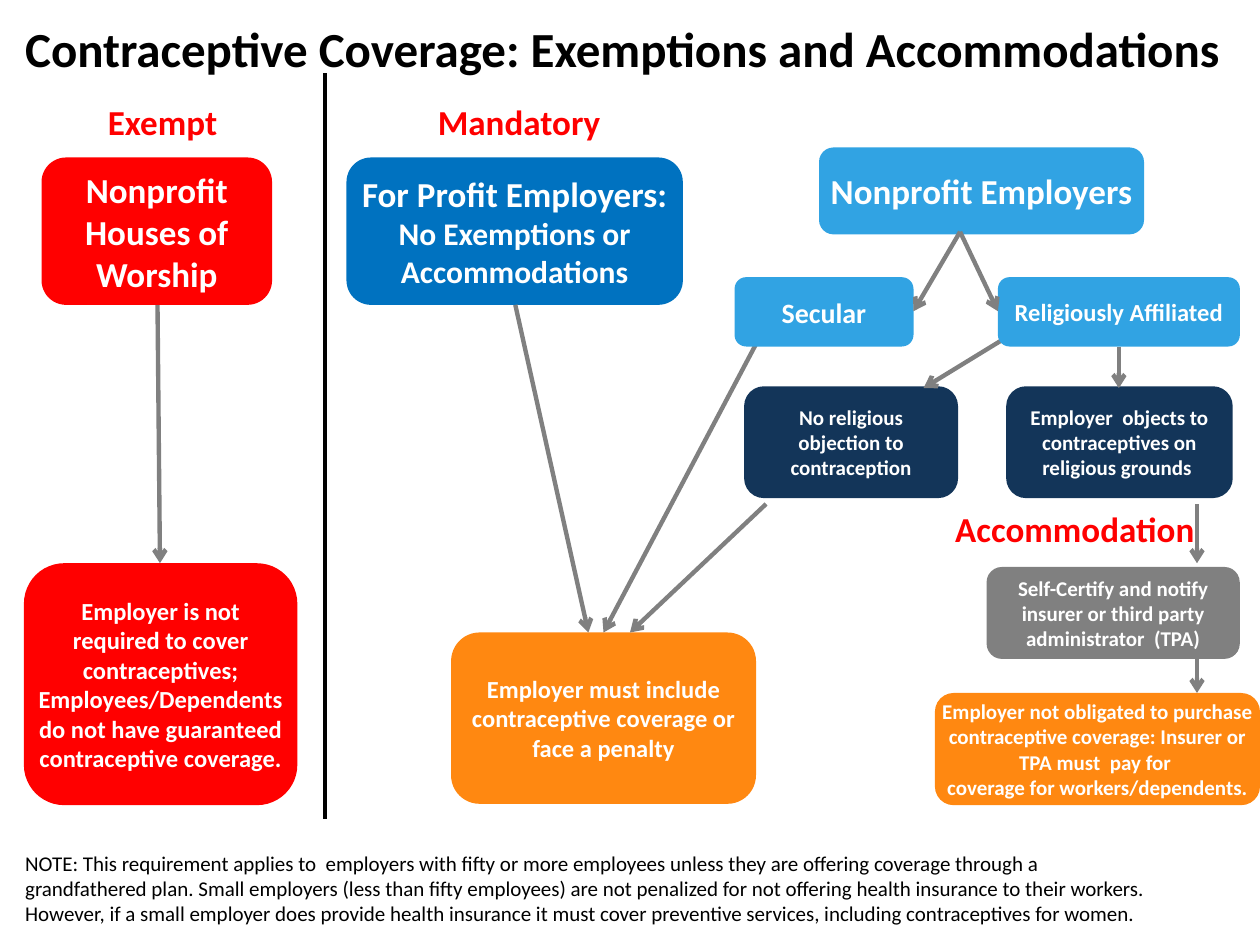
from lxml import etree
from pptx import Presentation
from pptx.dml.color import RGBColor
from pptx.enum.shapes import MSO_CONNECTOR, MSO_SHAPE
from pptx.enum.text import MSO_ANCHOR, MSO_AUTO_SIZE, PP_ALIGN
from pptx.oxml.ns import qn
from pptx.util import Inches, Pt

COLORS = {
    "black": "000000", "white": "FFFFFF", "red": "FF0000", "orange": "FF8811",
    "blue": "0072C0", "sky": "31A3E3", "navy": "133559", "gray": "808080",
}


def color(name):
    return RGBColor.from_string(COLORS[name])


class FlowSlide:
    font = "Calibri"

    def __init__(self, prs):
        self.s = prs.slides.add_slide(prs.slide_layouts[1])

    def set_text(self, tf, lines, ink, bold=True, align=PP_ALIGN.CENTER):
        """Fill a text frame with (text, size) paragraphs."""
        tf.text = "\n".join(text for text, _ in lines)
        for p, (_, size) in zip(tf.paragraphs, lines):
            p.alignment = align
            for r in p.runs:
                r.font.name, r.font.size, r.font.bold = self.font, Pt(size), bold
                r.font.color.rgb = color(ink)

    def placeholder(self, idx, at, text, size, bold, anchor):
        sp = self.s.placeholders[idx]
        sp.left, sp.top, sp.width, sp.height = map(Inches, at)
        tf = sp.text_frame
        self.set_text(tf, [(text, size)], "black", bold, PP_ALIGN.LEFT)
        tf.word_wrap = True
        tf.auto_size = MSO_AUTO_SIZE.NONE
        tf.vertical_anchor = anchor
        p = tf.paragraphs[0]
        p.space_before = Pt(0)
        pPr = p._p.get_or_add_pPr()
        pPr.set("marL", "0")
        pPr.set("indent", "0")
        etree.SubElement(pPr, qn("a:buNone"))

    def box(self, at, fill, lines, inset=0.0):
        sp = self.s.shapes.add_shape(MSO_SHAPE.ROUNDED_RECTANGLE, *map(Inches, at))
        sp.shadow.inherit = False
        sp.fill.solid()
        sp.fill.fore_color.rgb = color(fill)
        if fill == "navy":
            sp.line.color.rgb = color(fill)
            sp.line.width = Pt(2)
        else:
            sp.line.fill.background()
        tf = sp.text_frame
        tf.word_wrap = True
        tf.vertical_anchor = MSO_ANCHOR.MIDDLE
        tf.margin_left = tf.margin_right = Inches(inset)
        tf.margin_top = tf.margin_bottom = Inches(inset / 2)
        self.set_text(tf, lines, "white")

    def label(self, left, top, width, text):
        sp = self.s.shapes.add_textbox(*map(Inches, (left, top, width, 0.44)))
        sp.text_frame.word_wrap = False
        self.set_text(sp.text_frame, [(text, 20)], "red")

    def line(self, start, end, ink="gray", width=2.5, arrow=True):
        c = self.s.shapes.add_connector(
            MSO_CONNECTOR.STRAIGHT, *map(Inches, (*start, *end)))
        c.line.color.rgb = color(ink)
        c.line.width = Pt(width)
        spPr = c._element.spPr
        if arrow:
            etree.SubElement(spPr.find(qn("a:ln")), qn("a:tailEnd"), type="arrow")
        etree.SubElement(spPr, qn("a:effectLst"))


def main():
    prs = Presentation()
    prs.slide_width, prs.slide_height = Inches(10), Inches(7.5)
    flow = FlowSlide(prs)

    flow.placeholder(0, (0.1, 0.1, 9.8, 1),
                     "Contraceptive Coverage: Exemptions and Accommodations",
                     28, True, MSO_ANCHOR.TOP)
    flow.placeholder(
        1, (0.1, 6.8, 9.23, 0.6),
        "NOTE: This requirement applies to  employers with fifty or more employees "
        "unless they are offering coverage through a grandfathered plan. Small employers "
        "(less than fifty employees) are not penalized for not offering health insurance "
        "to their workers. However, if a small employer does provide health insurance it "
        "must cover preventive services, including contraceptives for women.",
        12, False, MSO_ANCHOR.BOTTOM)

    # Outcomes and the religious-objection branch
    flow.box((2.75, 1.25, 2.67, 1.17), "blue",
             [("For Profit Employers:", 20), ("No Exemptions or Accommodations", 18)])
    flow.box((3.58, 5.02, 2.42, 1.36), "orange",
             [("Employer must include contraceptive coverage or face a penalty", 14)], 0.1)
    flow.box((0.19, 4.47, 2.17, 1.92), "red",
             [("Employer is not required to cover contraceptives; Employees/Dependents "
               "do not have guaranteed contraceptive coverage.", 14)])
    flow.box((7.42, 5.5, 2.58, 0.89), "orange",
             [("Employer not obligated to purchase contraceptive coverage: Insurer or "
               "TPA must  pay for ", 12), ("coverage for workers/dependents.", 12)])
    flow.box((8, 3.08, 1.77, 0.86), "navy",
             [("Employer  objects to contraceptives on religious grounds ", 12)], 0.1)
    flow.box((7.83, 4.5, 2.01, 0.73), "gray",
             [("Self-Certify and notify insurer or third party administrator  (TPA)", 12)],
             0.1)
    flow.box((5.92, 3.08, 1.67, 0.86), "navy",
             [("No religious objection to contraception", 12)], 0.1)

    flow.line((2.58, 0.58), (2.58, 6.5), "black", 2.25, arrow=False)
    for start, end in [
        ((6.08, 2.58), (4.79, 5.02)),
        ((8, 2.67), (7.33, 3.08)),
        ((8.88, 2.75), (8.88, 3.08)),
        ((6.08, 4), (5, 5.02)),
        ((9.5, 4), (9.5, 4.47)),
        ((4.09, 2.42), (4.67, 5.02)),
        ((9.5, 5.23), (9.5, 5.5)),
        ((1.25, 2.42), (1.27, 4.47)),
    ]:
        flow.line(start, end)

    # Employer types cover the start of their outgoing arrows
    flow.box((0.33, 1.25, 1.83, 1.17), "red", [("Nonprofit Houses of Worship", 20)])
    flow.box((6.5, 1.17, 2.58, 0.69), "sky", [("Nonprofit Employers", 20)])
    flow.box((5.83, 2.2, 1.42, 0.55), "sky", [("Secular", 16)])
    flow.box((7.92, 2.2, 1.92, 0.55), "sky", [("Religiously Affiliated", 14)])
    for x in (7.25, 7.92):
        flow.line((7.62, 1.84), (x, 2.47))

    flow.label(0.75, 0.75, 1.08, "Exempt")
    flow.label(3.37, 0.75, 1.5, "Mandatory")
    flow.label(7.47, 3.98, 2.12, "Accommodation")

    prs.save("out.pptx")


if __name__ == "__main__":
    main()
